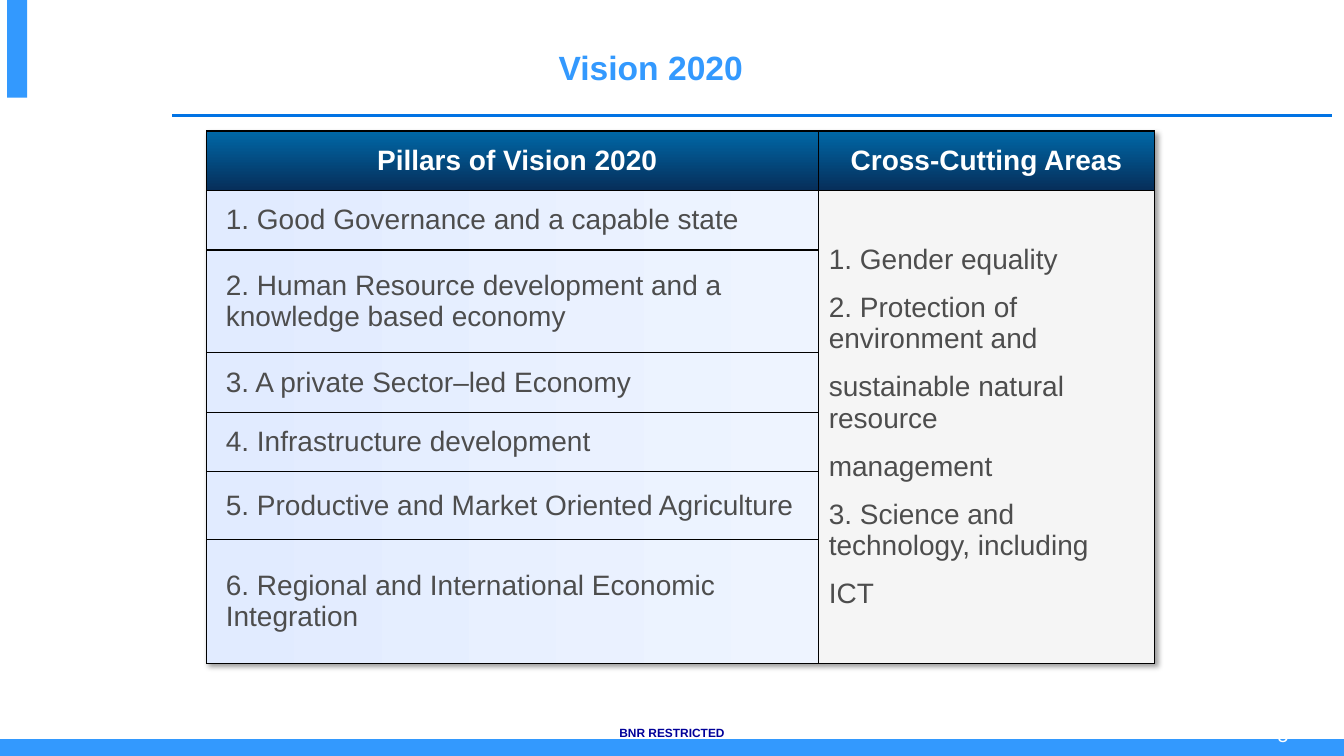
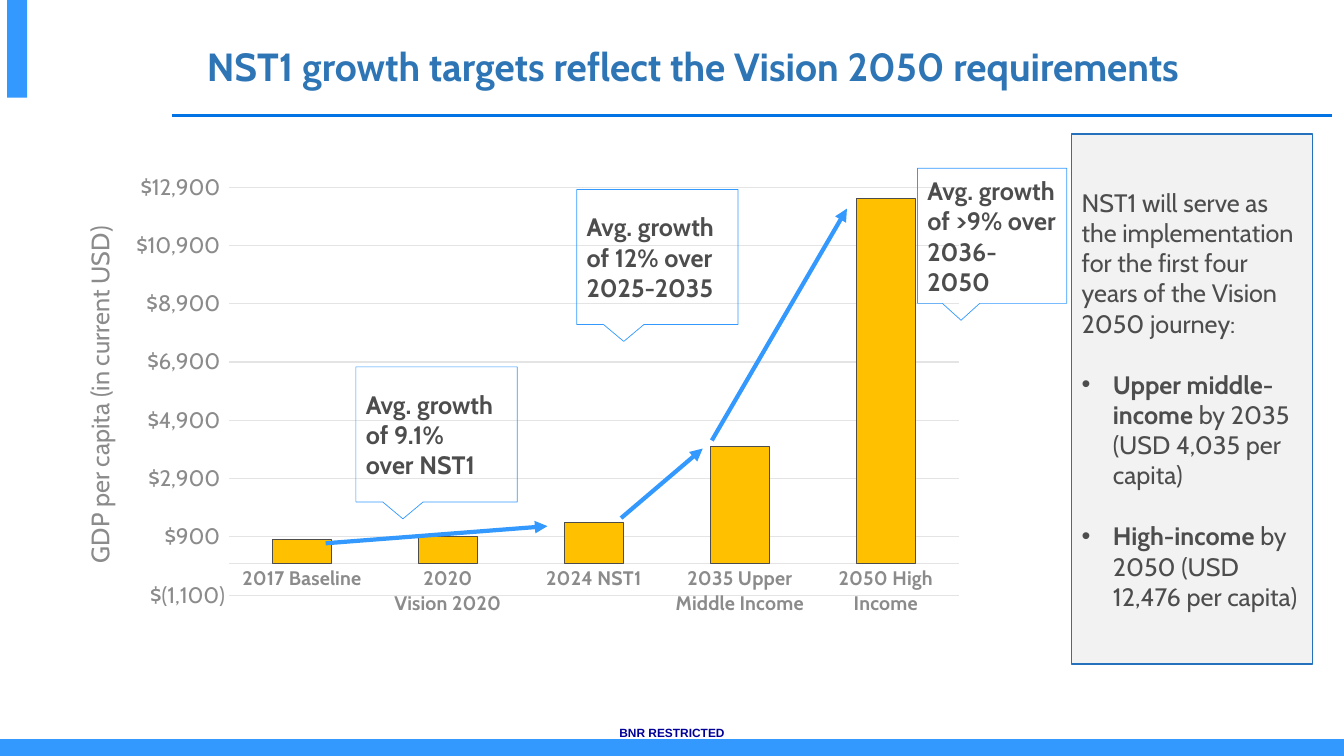
from dataclasses import dataclass
from typing import Any, NamedTuple, Optional

from lxml import etree
from pptx import Presentation
from pptx import util as u
from pptx.chart import data as chart_data
from pptx.dml import color
from pptx.enum import chart as charts, shapes, text
from pptx.oxml import ns


@dataclass(frozen=True)
class Theme:
    accent: str = "3399FE"
    rule: str = "0173E4"
    title: str = "2E75B6"
    body: str = "4D4D4D"
    axis: str = "8B8B8B"
    grid: str = "E4E4E4"
    bar: str = "FFC000"
    panel: str = "F2F2F2"
    panel_line: str = "2671BC"
    cell: str = "F5F5F5"
    footer: str = "000099"
    white: str = "FFFFFF"
    black: str = "000000"
    header_gradient: tuple[str, str] = ("062E5A", "0068A7")
    cell_gradient: tuple[str, str] = ("E1EBFF", "EEF4FF")
    plain_font: str = "Arial"
    display_font: str = "Cabin"
    footer_size: float = 8.5
    number_size: float = 14
    table_size: float = 20
    body_size: float = 18
    category_size: float = 14
    value_size: float = 16


THEME = Theme()


class Box(NamedTuple):
    left: float
    top: float
    width: float
    height: float

    def lengths(self) -> list[u.Length]:
        return [u.Inches(value) for value in self]


class Style(NamedTuple):
    size: float
    color: str
    font: str
    bold: bool = False


class Callout(NamedTuple):
    box: Box
    lines: tuple[str, ...]


class Arrow(NamedTuple):
    start: tuple[float, float]
    end: tuple[float, float]


class Target(NamedTuple):
    name: str
    detail: str


PILLARS = (
    "1. Good Governance and a capable state",
    "2. Human Resource development and a knowledge based economy",
    "3. A private Sector–led Economy",
    "4. Infrastructure development",
    "5. Productive and Market Oriented Agriculture",
    "6. Regional and International Economic Integration",
)
CROSS_CUTTING = (
    "1. Gender equality",
    "2. Protection of environment and",
    "sustainable natural resource",
    "management",
    "3. Science and technology, including",
    "ICT",
)
COLUMN_WIDTHS = (6.07, 3.33)
ROW_HEIGHTS = (0.59, 0.59, 1.02, 0.59, 0.59, 0.67, 1.23)
GDP = {
    "2017 Baseline": 800,
    "2020\nVision 2020": 900,
    "2024 NST1": 1400,
    "2035 Upper Middle Income": 4000,
    "2050 High Income": 12500,
}
CALLOUTS = (
    Callout(Box(3.53, 3.64, 1.6, 1.34), ("Avg. growth of 9.1%", "over NST1")),
    Callout(Box(5.72, 1.88, 1.6, 1.34), ("Avg. growth of 12% over 2025-2035",)),
    Callout(Box(9.1, 1.67, 1.48, 1.34), ("Avg. growth of >9% over 2036-2050",)),
)
ARROWS = (
    Arrow((3.23, 5.39), (5.43, 5.22)),
    Arrow((6.16, 5.14), (6.97, 4.45)),
    Arrow((7.06, 4.37), (8.4, 2.07)),
)
PANEL_INTRO = "NST1 will serve as the implementation for the first four years of the Vision 2050 journey:"
TARGETS = (
    Target("Upper middle-income ", "by 2035 (USD 4,035 per capita)"),
    Target("High-income ", "by 2050 (USD 12,476 per capita)"),
)


def rgb(value: str) -> color.RGBColor:
    return color.RGBColor.from_string(value)


def add_child(parent: Any, tag: str, index: Optional[int] = None, **attributes: Any) -> Any:
    child = etree.SubElement(parent, ns.qn(tag), {key: str(value) for key, value in attributes.items()})
    if index is not None:
        parent.insert(index, child)
    return child


def format_font(font: Any, style: Style) -> None:
    font.size, font.bold, font.name = u.Pt(style.size), style.bold, style.font
    font.color.rgb = rgb(style.color)


def write(frame: Any, lines: tuple[str, ...], style: Style, centred: bool = False, gap: float = 0) -> None:
    frame.text = "\n".join(lines)
    frame.word_wrap = True
    frame.vertical_anchor = text.MSO_ANCHOR.MIDDLE
    for position, paragraph in enumerate(frame.paragraphs):
        paragraph.alignment = text.PP_ALIGN.CENTER if centred else text.PP_ALIGN.LEFT
        if position and gap:
            paragraph.space_before = u.Pt(gap)
        for run in paragraph.runs:
            format_font(run.font, style)


def add_box(slide: Any, kind: Any, box: Box, fill: Optional[str], line: Optional[str], width: float = 1) -> Any:
    shape = slide.shapes.add_shape(kind, *box.lengths())
    shape.shadow.inherit = False
    if fill:
        shape.fill.solid()
        shape.fill.fore_color.rgb = rgb(fill)
    else:
        shape.fill.background()
    if line:
        shape.line.color.rgb = rgb(line)
        shape.line.width = u.Pt(width)
    else:
        shape.line.fill.background()
    return shape


def add_line(slide: Any, path: Arrow, line: str, width: float, arrowhead: bool = False) -> None:
    ends = [u.Inches(value) for value in (*path.start, *path.end)]
    connector = slide.shapes.add_connector(shapes.MSO_CONNECTOR.STRAIGHT, *ends)
    connector.line.color.rgb = rgb(line)
    connector.line.width = u.Pt(width)
    if arrowhead:
        add_child(connector.line._get_or_add_ln(), "a:tailEnd", type="triangle")
    add_child(connector._element.spPr, "a:effectLst")


def add_label(slide: Any, box: Box, label: str, style: Style) -> None:
    write(slide.shapes.add_textbox(*box.lengths()).text_frame, (label,), style, centred=True)


def add_slide(presentation: Any, title: str, box: Box, style: Style) -> Any:
    slide = presentation.slides.add_slide(presentation.slide_layouts.get_by_name("Title Only"))
    placeholder = slide.shapes.title
    placeholder.left, placeholder.top, placeholder.width, placeholder.height = box.lengths()
    write(placeholder.text_frame, (title,), style, centred=True)
    placeholder.text_frame.auto_size = text.MSO_AUTO_SIZE.NONE
    rectangle = shapes.MSO_SHAPE.RECTANGLE
    add_box(slide, rectangle, Box(0, 7.34, 13.33, 0.16), THEME.accent, THEME.accent)
    add_box(slide, rectangle, Box(0.07, 0, 0.2, 0.97), THEME.accent, None)
    footer = Style(THEME.footer_size, THEME.footer, THEME.plain_font, True)
    add_label(slide, Box(0, 7.15, 13.33, 0.24), "BNR RESTRICTED", footer)
    add_line(slide, Arrow((1.71, 1.15), (13.21, 1.15)), THEME.rule, 2.25)
    return slide


def fill_gradient(fill: Any, stops: tuple[str, str], angle: float) -> None:
    fill.gradient()
    fill.gradient_angle = angle
    for stop, value in zip(fill.gradient_stops, stops):
        stop.color.rgb = rgb(value)


def add_borders(cell: Any) -> None:
    properties = cell._tc.get_or_add_tcPr()
    for index, side in enumerate(("a:lnL", "a:lnR", "a:lnT", "a:lnB")):
        border = add_child(properties, side, index, w=u.Pt(1))
        add_child(add_child(border, "a:solidFill"), "a:srgbClr", val=THEME.black)


def add_table_shadow(table: Any) -> None:
    effects = add_child(table._tbl.tblPr, "a:effectLst", 0)
    shadow = add_child(effects, "a:outerShdw", blurRad=u.Pt(4), dist=u.Pt(3), dir=2700000, algn="tl", rotWithShape=0)
    add_child(add_child(shadow, "a:srgbClr", val=THEME.black), "a:alpha", val=40000)


def add_pillars_table(slide: Any) -> None:
    box = Box(2.05, 1.3, sum(COLUMN_WIDTHS), sum(ROW_HEIGHTS))
    table = slide.shapes.add_table(len(ROW_HEIGHTS), len(COLUMN_WIDTHS), *box.lengths()).table
    table.first_row = table.horz_banding = False
    add_table_shadow(table)
    for column, width in zip(table.columns, COLUMN_WIDTHS):
        column.width = u.Inches(width)
    for row, height in zip(table.rows, ROW_HEIGHTS):
        row.height = u.Inches(height)
    header = Style(THEME.table_size, THEME.white, THEME.plain_font, True)
    body = Style(THEME.table_size, THEME.body, THEME.plain_font)
    for index, label in enumerate(("Pillars of Vision 2020", "Cross-Cutting Areas")):
        cell = table.cell(0, index)
        write(cell.text_frame, (label,), header, centred=True)
        fill_gradient(cell.fill, THEME.header_gradient, 90)
    for index, pillar in enumerate(PILLARS, 1):
        cell = table.cell(index, 0)
        write(cell.text_frame, (pillar,), body)
        fill_gradient(cell.fill, THEME.cell_gradient, 0)
    areas = table.cell(1, 1)
    areas.merge(table.cell(len(PILLARS), 1))
    write(areas.text_frame, CROSS_CUTTING, body, gap=12)
    areas.fill.solid()
    areas.fill.fore_color.rgb = rgb(THEME.cell)
    for row in range(len(ROW_HEIGHTS)):
        table.cell(row, 0).margin_left = u.Inches(0.19)
        for column in range(len(COLUMN_WIDTHS)):
            cell = table.cell(row, column)
            cell.vertical_anchor = text.MSO_ANCHOR.MIDDLE
            add_borders(cell)


def place_plot(chart: Any, box: Box) -> None:
    plot_area = chart._chartSpace.chart.plotArea
    for existing in plot_area.findall(ns.qn("c:layout")):
        plot_area.remove(existing)
    layout = add_child(add_child(plot_area, "c:layout", 0), "c:manualLayout")
    add_child(layout, "c:layoutTarget", val="inner")
    for side in "xy":
        add_child(layout, f"c:{side}Mode", val="edge")
    for side, value in zip("xywh", box):
        add_child(layout, f"c:{side}", val=value)


def add_gdp_chart(slide: Any) -> None:
    values = chart_data.CategoryChartData()
    values.categories = list(GDP)
    values.add_series("Series 1", list(GDP.values()))
    box = Box(0.77, 1.62, 9.21, 5.15)
    chart = slide.shapes.add_chart(charts.XL_CHART_TYPE.COLUMN_CLUSTERED, *box.lengths(), values).chart
    chart.has_legend = chart.has_title = False
    format_font(chart.font, Style(12, THEME.body, THEME.display_font))
    plot = chart.plots[0]
    plot.gap_width, plot.overlap, plot.vary_by_categories = 146, -27, False
    bars = plot.series[0].format
    bars.fill.solid()
    bars.fill.fore_color.rgb = rgb(THEME.bar)
    bars.line.color.rgb = rgb(THEME.body)
    bars.line.width = u.Pt(0.75)
    categories, amounts = chart.category_axis, chart.value_axis
    for axis in (categories, amounts):
        axis.major_tick_mark = axis.minor_tick_mark = charts.XL_TICK_MARK.NONE
    format_font(categories.tick_labels.font, Style(THEME.category_size, THEME.axis, THEME.display_font, True))
    format_font(amounts.tick_labels.font, Style(THEME.value_size, THEME.axis, THEME.display_font))
    amounts.minimum_scale, amounts.maximum_scale, amounts.major_unit = -1100, 12900, 2000
    amounts.tick_labels.number_format = '_("$"* #,##0_);_("$"* \\(#,##0\\);_("$"* "-"??_);_(@_)'
    amounts.tick_labels.number_format_is_linked = False
    amounts.format.line.fill.background()
    for line in (categories.format.line, amounts.major_gridlines.format.line):
        line.color.rgb = rgb(THEME.grid)
        line.width = u.Pt(0.75)
    frame = amounts.axis_title.text_frame
    frame.text = "GDP per capita (in current USD)"
    format_font(frame.paragraphs[0].runs[0].font, Style(THEME.body_size, THEME.axis, THEME.display_font))
    place_plot(chart, Box(0.163, 0.046, 0.786, 0.786))


def add_targets_panel(slide: Any) -> None:
    panel = add_box(slide, shapes.MSO_SHAPE.RECTANGLE, Box(10.63, 1.33, 2.39, 5.26), THEME.panel, THEME.panel_line)
    style = Style(THEME.body_size, THEME.body, THEME.display_font)
    write(panel.text_frame, (PANEL_INTRO,), style)
    for target in TARGETS:
        paragraph = panel.text_frame.add_paragraph()
        paragraph.alignment = text.PP_ALIGN.LEFT
        paragraph.space_before = u.Pt(22)
        properties = paragraph._p.get_or_add_pPr()
        properties.set("marL", str(u.Inches(0.31)))
        properties.set("indent", str(u.Inches(-0.31)))
        add_child(properties, "a:buFont", typeface=THEME.plain_font)
        add_child(properties, "a:buChar", char="•")
        for part, bold in zip(target, (True, False)):
            run = paragraph.add_run()
            run.text = part
            format_font(run.font, style._replace(bold=bold))


def build_vision_slide(presentation: Any) -> None:
    style = Style(24, THEME.accent, THEME.plain_font, True)
    slide = add_slide(presentation, "Vision 2020", Box(3.03, 0.37, 6.85, 0.6), style)
    number = Style(THEME.number_size, THEME.white, THEME.plain_font)
    add_label(slide, Box(12.12, 7.08, 1.21, 0.42), "5", number)
    add_pillars_table(slide)


def build_growth_slide(presentation: Any) -> None:
    style = Style(28, THEME.title, THEME.display_font, True)
    title = "NST1 growth targets reflect the Vision 2050 requirements"
    slide = add_slide(presentation, title, Box(0.96, 0.18, 11.82, 0.95), style)
    add_gdp_chart(slide)
    add_targets_panel(slide)
    for arrow in ARROWS:
        add_line(slide, arrow, THEME.accent, 3, arrowhead=True)
    for callout in CALLOUTS:
        shape = add_box(slide, shapes.MSO_SHAPE.RECTANGULAR_CALLOUT, callout.box, None, THEME.accent, 0.5)
        write(shape.text_frame, callout.lines, Style(THEME.body_size, THEME.body, THEME.display_font, True))


def main() -> None:
    presentation = Presentation()
    presentation.slide_width, presentation.slide_height = u.Inches(13.33), u.Inches(7.5)
    build_vision_slide(presentation)
    build_growth_slide(presentation)
    presentation.save("out.pptx")


if __name__ == "__main__":
    main()
